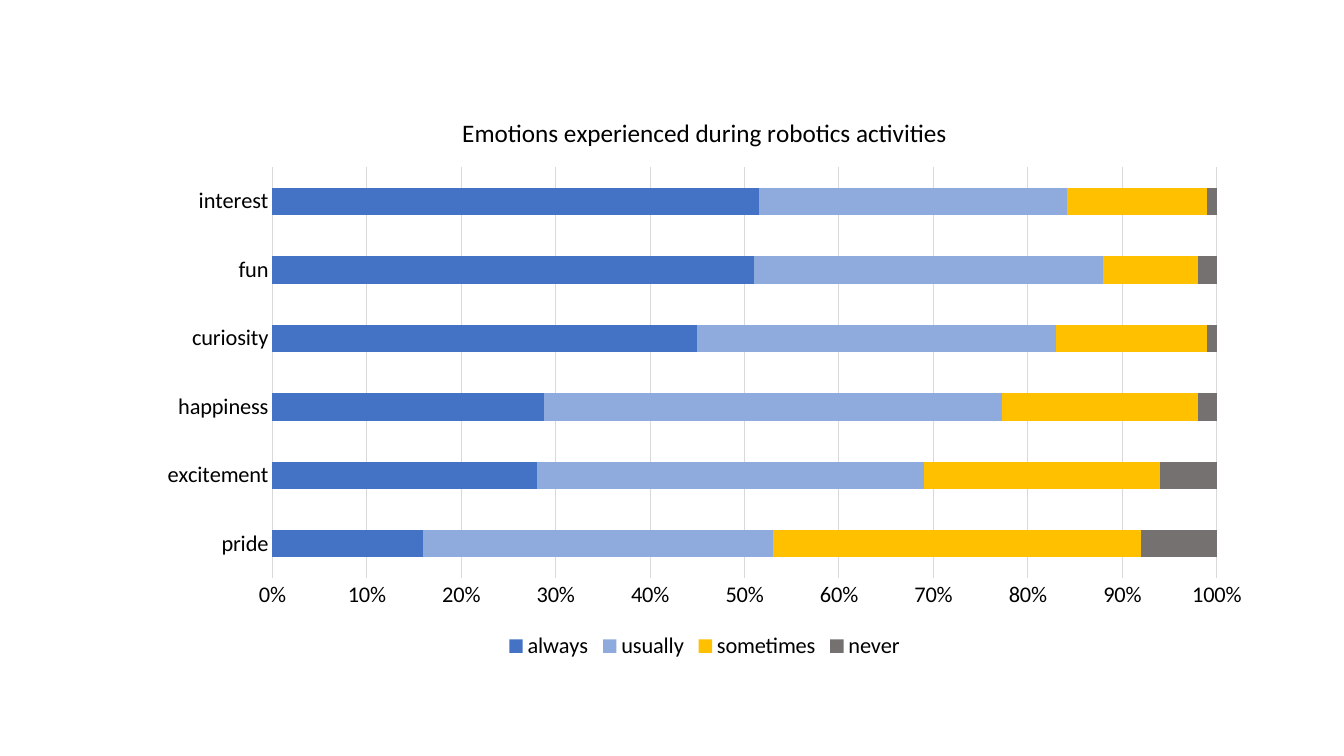
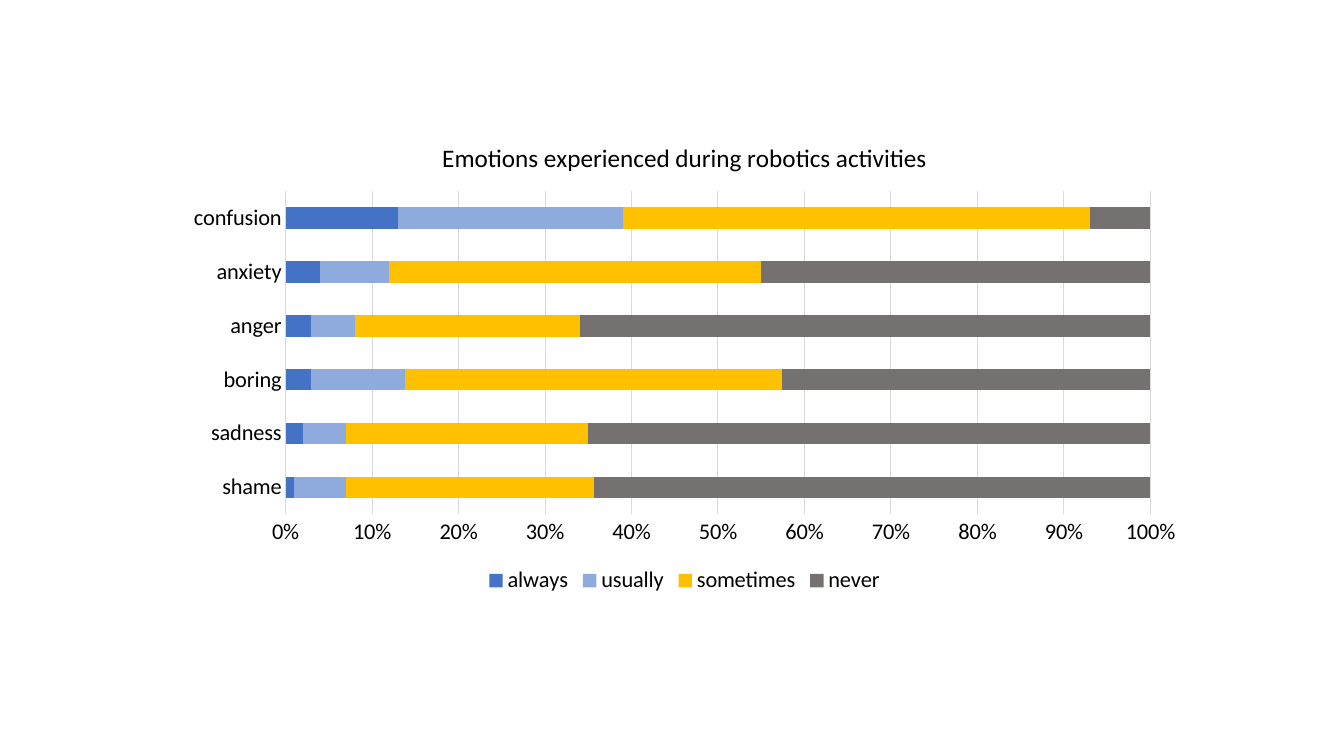
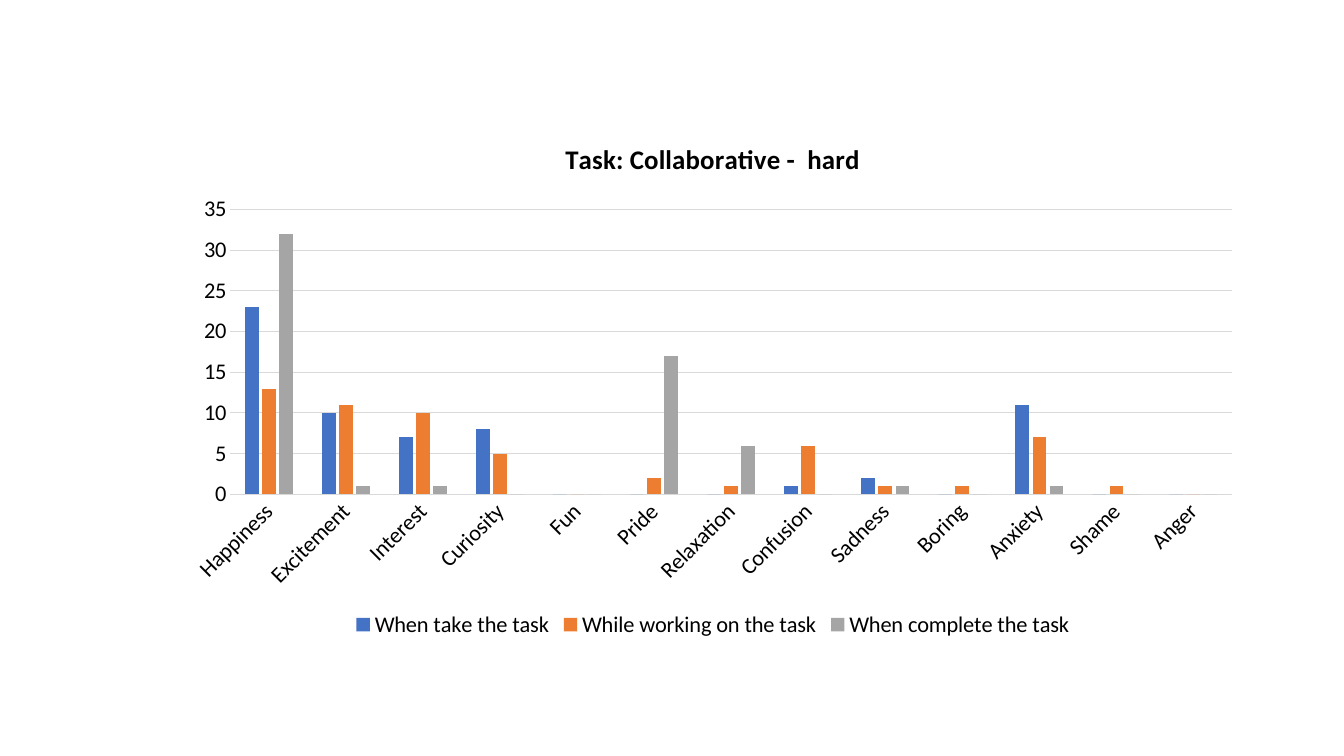
from pptx import Presentation
from pptx.chart.data import CategoryChartData
from pptx.dml.color import RGBColor
from pptx.enum.chart import XL_CHART_TYPE, XL_LEGEND_POSITION, XL_TICK_MARK
from pptx.util import Cm, Pt

STACKED = XL_CHART_TYPE.BAR_STACKED_100
CLUSTERED = XL_CHART_TYPE.COLUMN_CLUSTERED
LEGEND_BOTTOM = XL_LEGEND_POSITION.BOTTOM
NO_TICKS = XL_TICK_MARK.NONE

# Theme: colours, type sizes and the formats shared by all charts
THEME = {
    "font": "Calibri",
    "text": RGBColor.from_string("000000"),
    "grid": RGBColor.from_string("D9D9D9"),
    "grid_width": Pt(0.75),
    "text_size": Pt(16),
    "frequency_colours": ["4472C4", "8FAADC", "FFC000", "767171"],
    "task_colours": ["4472C4", "ED7D31", "A5A5A5"],
}
STACKED_STYLE = {
    "type": STACKED,
    "title": "Emotions experienced during robotics activities",
    "title_font": {"size": Pt(18), "bold": False},
    "colours": THEME["frequency_colours"],
    "plot": {"gap_width": 150, "overlap": 100},
    "number_format": "0%",
    "label_rotation": 0,
}
CLUSTERED_STYLE = {
    "type": CLUSTERED,
    "title": "Task: Collaborative -  hard",
    "title_font": {"size": Pt(19.2), "bold": True},
    "colours": THEME["task_colours"],
    "plot": {"gap_width": 219, "overlap": -27},
    "number_format": "General",
    "label_rotation": -45,
}

# Content: one chart per slide, with its frame as left, top, width, height in cm
CHARTS = [
    {
        "style": STACKED_STYLE,
        "frame": (3.66, 2.36, 28.19, 14.38),
        "categories": ["pride", "excitement", "happiness", "curiosity", "fun", "interest"],
        "series": {
            "always": [16, 28, 29, 45, 51, 52],
            "usually": [37, 41, 49, 38, 37, 33],
            "sometimes": [39, 25, 21, 16, 10, 15],
            "never": [8, 6, 2, 1, 2, 1],
        },
    },
    {
        "style": STACKED_STYLE,
        "frame": (4.37, 3.05, 25.76, 12.04),
        "categories": ["shame", "sadness", "boring", "anger", "anxiety", "confusion"],
        "series": {
            "always": [1, 2, 3, 3, 4, 13],
            "usually": [6, 5, 11, 5, 8, 26],
            "sometimes": [29, 28, 44, 26, 43, 54],
            "never": [65, 65, 43, 66, 45, 7],
        },
    },
    {
        "style": CLUSTERED_STYLE,
        "frame": (4.34, 3.02, 27.25, 13.18),
        "categories": ["Happiness", "Excitement", "Interest", "Curiosity", "Fun", "Pride",
                       "Relaxation", "Confusion", "Sadness", "Boring", "Anxiety", "Shame", "Anger"],
        "series": {
            "When take the task": [23, 10, 7, 8, 0, 0, 0, 1, 2, 0, 11, 0, 0],
            "While working on the task": [13, 11, 10, 5, 0, 2, 1, 6, 1, 1, 7, 1, 0],
            "When complete the task": [32, 1, 1, 0, 0, 17, 6, 0, 1, 0, 1, 0, 0],
        },
    },
]


def set_attributes(target, values):
    for name, value in values.items():
        setattr(target, name, value)


def set_font(font, **values):
    set_attributes(font, {"name": THEME["font"], "size": THEME["text_size"], **values})
    font.color.rgb = THEME["text"]


presentation = Presentation()
presentation.slide_width = Cm(33.87)
presentation.slide_height = Cm(19.05)
blank_layout = presentation.slide_layouts[6]

for content in CHARTS:
    style = content["style"]
    slide = presentation.slides.add_slide(blank_layout)

    # Chart and its data
    data = CategoryChartData()
    data.categories = content["categories"]
    for name, values in content["series"].items():
        data.add_series(name, values)
    frame = [Cm(length) for length in content["frame"]]
    chart = slide.shapes.add_chart(style["type"], *frame, data).chart
    set_font(chart.font)

    # Title
    chart.has_title = True
    chart.chart_title.include_in_layout = False
    paragraph = chart.chart_title.text_frame.paragraphs[0]
    run = paragraph.add_run()
    run.text = style["title"]
    set_font(run.font, **style["title_font"])

    # Legend
    chart.has_legend = True
    set_attributes(chart.legend, {"position": LEGEND_BOTTOM, "include_in_layout": False})
    set_font(chart.legend.font)

    # Axes and gridlines
    category_axis, value_axis = chart.category_axis, chart.value_axis
    for axis in (category_axis, value_axis):
        set_attributes(axis, {"major_tick_mark": NO_TICKS, "minor_tick_mark": NO_TICKS})
        set_font(axis.tick_labels.font)
    value_axis.has_major_gridlines = True
    for line in (category_axis.format.line, value_axis.major_gridlines.format.line):
        line.color.rgb = THEME["grid"]
        line.width = THEME["grid_width"]
    value_axis.format.line.fill.background()
    set_attributes(value_axis.tick_labels, {
        "number_format": style["number_format"], "number_format_is_linked": False})
    if style["label_rotation"]:
        label_body = category_axis._element.txPr.bodyPr
        label_body.set("rot", str(style["label_rotation"] * 60000))

    # Bars
    plot = chart.plots[0]
    set_attributes(plot, {"vary_by_categories": False, **style["plot"]})
    for series, colour in zip(plot.series, style["colours"]):
        series.invert_if_negative = False
        series.format.fill.solid()
        series.format.fill.fore_color.rgb = RGBColor.from_string(colour)

presentation.save("out.pptx")
